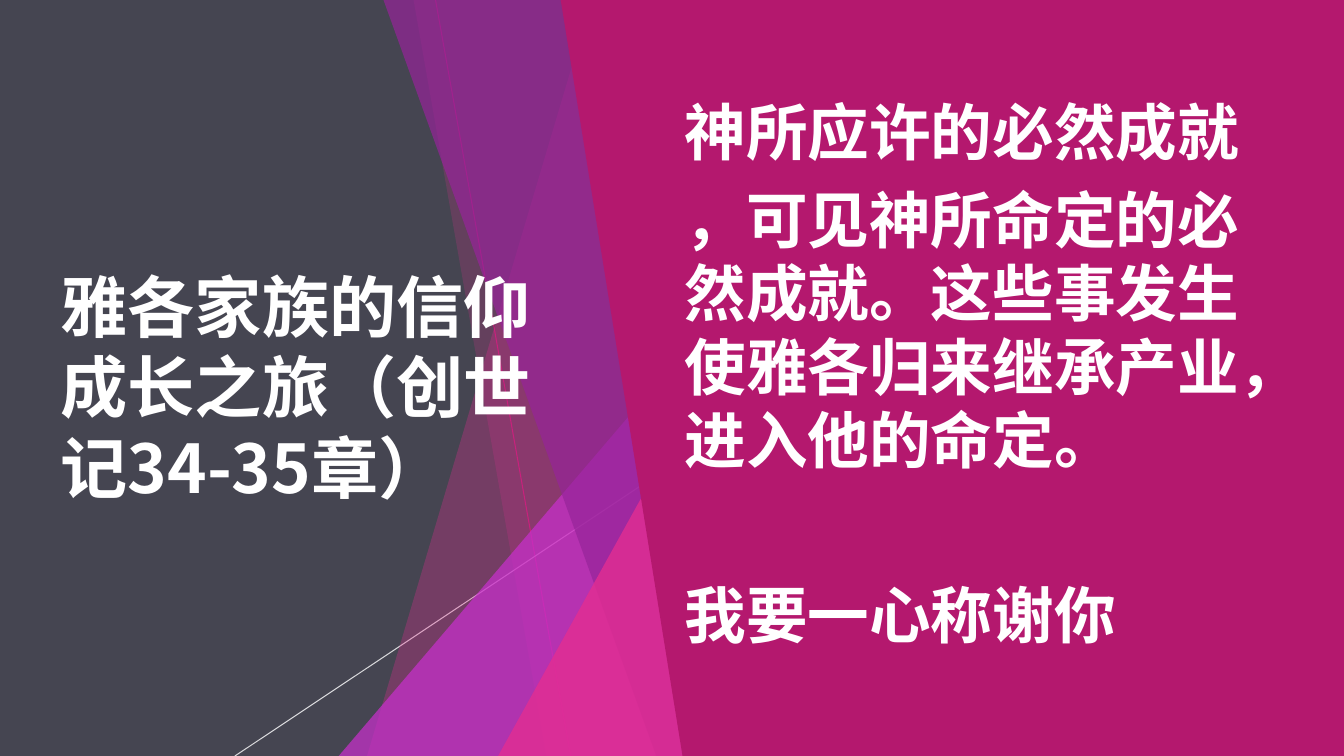
"""Build a slide with a title on dark grey and a passage on a faceted magenta panel."""
from lxml.etree import SubElement
from pptx import Presentation
from pptx.dml.color import RGBColor
from pptx.enum.shapes import MSO_CONNECTOR, MSO_SHAPE
from pptx.enum.text import MSO_ANCHOR, MSO_AUTO_SIZE, PP_ALIGN
from pptx.oxml.ns import qn
from pptx.util import Inches, Pt

WIDTH, HEIGHT, TOP = 13.33, 7.5, -0.01
FONT = "Noto Sans CJK SC"
SLATE = RGBColor(0x45, 0x45, 0x51)
WHITE = RGBColor(0xFF, 0xFF, 0xFF)
MAGENTA = RGBColor(0xB4, 0x18, 0x6E)
PINK = RGBColor(0xE3, 0x2D, 0x91)
ORCHID = RGBColor(0xC8, 0x30, 0xCC)
PURPLE = RGBColor(0x96, 0x24, 0x99)

HEADING = ["雅各家族的信仰成长之旅（创世记34-35章）"]
PASSAGE = [
    "神所应许的必然成就",
    "，可见神所命定的必然成就。这些事发生使雅各归来继承产业，进入他的命定。",
    "",
    "我要一心称谢你",
]

SEAM = 6.92
RAYS = [
    ((4.32, 0), (5.66, HEIGHT), MAGENTA, 100),
    ((7.54, 4.03), (2.33, HEIGHT), WHITE, 80),
]
FACETS = [
    ("band", (5.87, SEAM, SEAM, 3.64), PINK, 30),
    ("band", (4.1, SEAM, SEAM, 5.42), PINK, 20),
    ("wedge", (3.36, 3.33), ORCHID, 72),
    ("band", (3.8, SEAM, SEAM, 6.51), PURPLE, 70),
    ("wedge", (4.94, 3.93), PINK, 80),
    ("band", (5.56, WIDTH, WIDTH, 6.77), MAGENTA, 100),
]


def paint(colour_format, colour, opacity, owner):
    """Set a colour and, below full opacity, its alpha."""
    colour_format.rgb = colour
    if opacity < 100:
        tint = next(owner.iter(qn("a:srgbClr")))
        SubElement(tint, qn("a:alpha")).set("val", str(opacity * 1000))


def add_ray(shapes, start, end, colour, opacity):
    """Draw one thin line."""
    ray = shapes.add_connector(MSO_CONNECTOR.STRAIGHT, *map(Inches, start + end))
    ray.line.width = Pt(0.75)
    paint(ray.line.color, colour, opacity, ray._element)
    SubElement(ray._element.spPr, qn("a:effectLst"))


def add_facet(shapes, kind, extent, colour, opacity):
    """Draw a full-height band or a right-angled wedge ending at the seam."""
    if kind == "band":
        corners = [(Inches(x), Inches(y))
                   for x, y in zip(extent, (TOP, TOP, HEIGHT, HEIGHT))]
        outline = shapes.build_freeform(*corners[0], scale=1.0)
        outline.add_line_segments(corners[1:], close=True)
        facet = outline.convert_to_shape()
    else:
        left, top = extent
        facet = shapes.add_shape(MSO_SHAPE.ISOSCELES_TRIANGLE,
                                 *map(Inches, (left, top, SEAM - left, HEIGHT - top)))
        facet.adjustments[0] = 1.0
    facet.shadow.inherit = False
    facet.line.fill.background()
    facet.fill.solid()
    paint(facet.fill.fore_color, colour, opacity, facet._element)


def write(holder, area, lines, size, pitch, before):
    """Place a text holder and fill it with bold white paragraphs."""
    holder.left, holder.top, holder.width, holder.height = map(Inches, area)
    frame = holder.text_frame
    frame.word_wrap = True
    frame.auto_size = MSO_AUTO_SIZE.NONE
    frame.vertical_anchor = MSO_ANCHOR.MIDDLE
    frame.text = "\n".join(lines)
    for paragraph in frame.paragraphs:
        paragraph.alignment = PP_ALIGN.LEFT
        paragraph.line_spacing = Pt(pitch)
        paragraph.space_before = Pt(before)
        paragraph.font.size = Pt(size)
        for run in paragraph.runs:
            run.font.size = Pt(size)
            run.font.bold = True
            run.font.color.rgb = WHITE
            run.font.name = FONT
            SubElement(run.font._element, qn("a:ea")).set("typeface", FONT)


def main():
    """Assemble and save the slide."""
    deck = Presentation()
    deck.slide_width, deck.slide_height = Inches(WIDTH), Inches(HEIGHT)
    slide = deck.slides.add_slide(deck.slide_layouts[5])
    slide.background.fill.solid()
    slide.background.fill.fore_color.rgb = SLATE
    shapes = slide.shapes
    for ray in RAYS:
        add_ray(shapes, *ray)
    for facet in FACETS:
        add_facet(shapes, *facet)
    passage = shapes.add_textbox(0, 0, 0, 0)
    write(passage, (6.69, 0.43, 6.14, 6.54), PASSAGE, 44, 52.5, 10)
    heading = shapes.title
    write(heading, (0.5, 0.57, 5.1, 6.52), HEADING, 48, 57.5, 0)
    passage._element.addnext(heading._element)
    deck.save("out.pptx")


if __name__ == "__main__":
    main()
